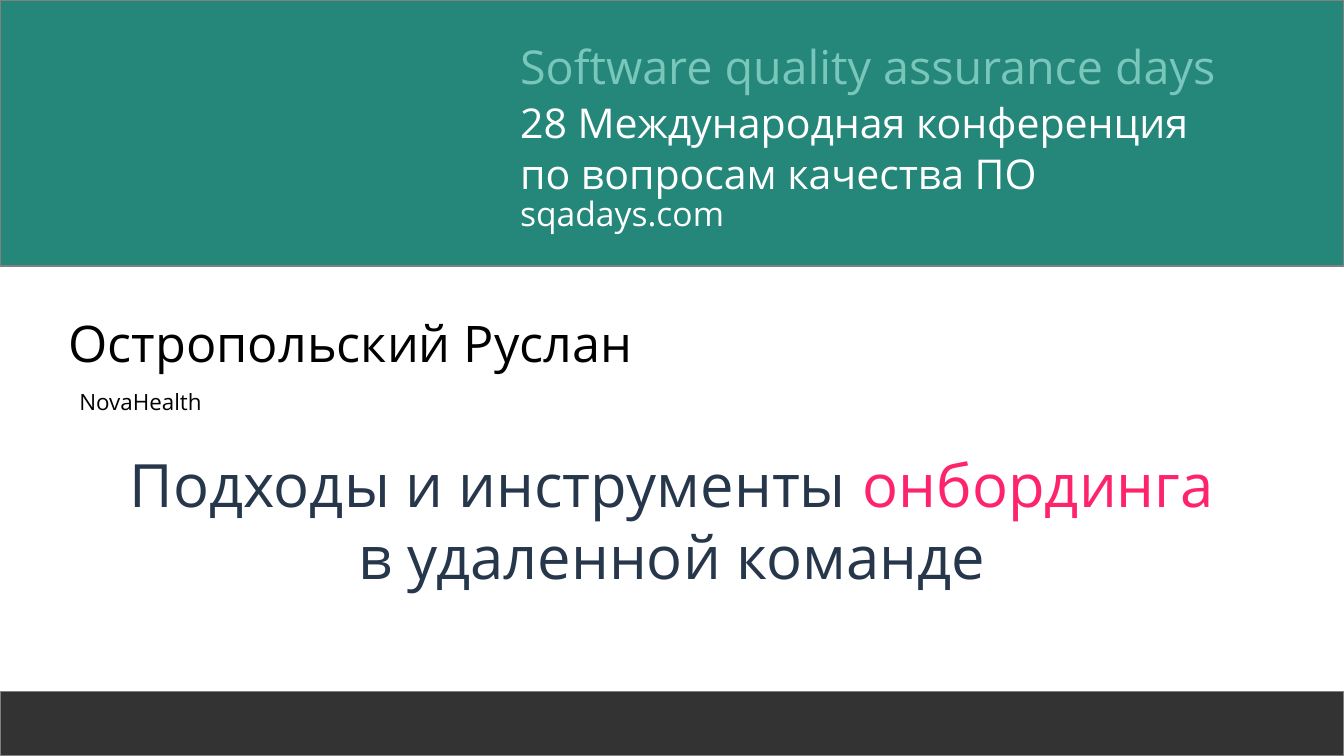
import pptx
import pptx.util
import pptx.dml.color
import pptx.enum.shapes
import pptx.enum.text

Inches, Pt = pptx.util.Inches, pptx.util.Pt
RGBColor = pptx.dml.color.RGBColor
ALIGN = pptx.enum.text.PP_ALIGN

TEAL = RGBColor(0x24, 0x87, 0x7A)
MINT = RGBColor(0x79, 0xC6, 0xBB)
CHARCOAL = RGBColor(0x33, 0x33, 0x33)
GRAY = RGBColor(0x80, 0x80, 0x80)
WHITE = RGBColor(0xFF, 0xFF, 0xFF)
BLACK = RGBColor(0x00, 0x00, 0x00)
NAVY = RGBColor(0x26, 0x36, 0x4B)
PINK = RGBColor(0xFE, 0x24, 0x6C)

FONT = "Open Sans"
SLIDE_WIDTH = 10
SLIDE_HEIGHT = SLIDE_WIDTH * 9 / 16
HEADER_HEIGHT, FOOTER_HEIGHT = 1.98, 0.48
EVENT_LEFT = 3.79

# top, height, color
BANDS = [
    (0, HEADER_HEIGHT, TEAL),
    (SLIDE_HEIGHT - FOOTER_HEIGHT, FOOTER_HEIGHT, CHARCOAL),
]

# box (left, top, width, height), size, alignment,
# lines: (line spacing, [(text, color), ...])
TEXTS = [
    ((EVENT_LEFT, 0.19, 5.85, 0.46), 25, ALIGN.LEFT,
     [(1.13, [("Software quality assurance days", MINT)])]),
    ((EVENT_LEFT, 0.64, 5.81, 0.73), 22, ALIGN.LEFT,
     [(1.13, [("28 Международная конференция", WHITE)]),
      (1.02, [("по вопросам качества ПО", WHITE)])]),
    ((EVENT_LEFT, 1.36, 1.86, 0.35), 18, ALIGN.LEFT,
     [(1.13, [("sqadays.com", WHITE)])]),
    ((0.43, 2.22, 9.29, 0.48), 27, ALIGN.LEFT,
     [(1.13, [("Остропольский Руслан", BLACK)])]),
    ((0.51, 2.82, 9.21, 0.25), 12, ALIGN.LEFT,
     [(1.13, [("NovaHealth", BLACK)])]),
    ((0.35, 3.29, 9.3, 0.85), 32, ALIGN.CENTER,
     [(1.0, [("Подходы и инструменты ", NAVY), ("онбординга", PINK)]),
      (1.0, [("в удаленной команде", NAVY)])]),
]


def add_band(slide, top, height, color):
    band = slide.shapes.add_shape(
        pptx.enum.shapes.MSO_SHAPE.ROUNDED_RECTANGLE,
        0, Inches(top), Inches(SLIDE_WIDTH), Inches(height))
    band.adjustments[0] = 0
    band.shadow.inherit = False
    band.fill.solid()
    band.fill.fore_color.rgb = color
    band.line.color.rgb = GRAY
    band.line.width = Pt(0.75)


def add_text(slide, box, size, alignment, lines):
    frame = slide.shapes.add_textbox(*map(Inches, box)).text_frame
    frame.word_wrap = True
    frame.margin_left = frame.margin_right = Inches(0.08)
    frame.margin_top = frame.margin_bottom = Inches(0.04)
    for index, (spacing, pieces) in enumerate(lines):
        paragraph = frame.add_paragraph() if index else frame.paragraphs[0]
        paragraph.alignment = alignment
        paragraph.line_spacing = spacing
        for words, color in pieces:
            run = paragraph.add_run()
            run.text = words
            run.font.name = FONT
            run.font.size = Pt(size)
            run.font.color.rgb = color


def main():
    presentation = pptx.Presentation()
    presentation.slide_width = Inches(SLIDE_WIDTH)
    presentation.slide_height = Inches(SLIDE_HEIGHT)
    slide = presentation.slides.add_slide(presentation.slide_layouts[6])
    for band in BANDS:
        add_band(slide, *band)
    for text in TEXTS:
        add_text(slide, *text)
    presentation.save("out.pptx")


if __name__ == "__main__":
    main()
